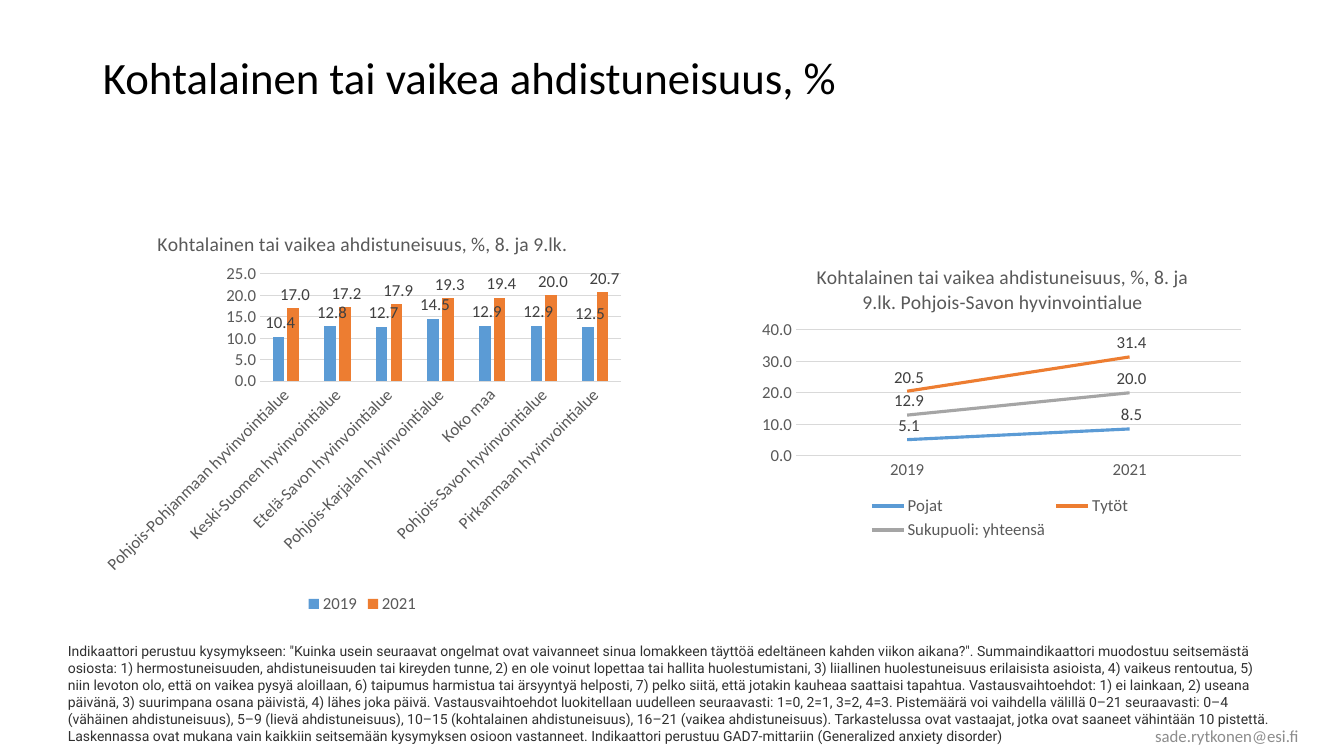
"""Build the slide on anxiety among pupils, with a column and a line chart."""
import pptx
import pptx.chart.data
import pptx.dml.color
import pptx.enum.chart
import pptx.enum.text
import pptx.oxml
import pptx.oxml.ns
import pptx.util

PX = 9071
FORM = r"#\ ##0.0"
GREY = "595959"
RULE = "D9D9D9"
kinds = pptx.enum.chart.XL_CHART_TYPE
spots = pptx.enum.chart.XL_LABEL_POSITION
none = pptx.enum.chart.XL_TICK_MARK.NONE
low = pptx.enum.chart.XL_LEGEND_POSITION.BOTTOM
aligns = pptx.enum.text.PP_ALIGN
anchors = pptx.enum.text.MSO_ANCHOR
qn = pptx.oxml.ns.qn
paint = pptx.dml.color.RGBColor.from_string


def style(font, size, color, face="Calibri"):
    font.size = pptx.util.Pt(size)
    font.name = face
    font.bold = False
    font.color.rgb = paint(color)


def place(node, inner, spot):
    old = node.find(qn("c:layout"))
    at = 0 if old is None else node.index(old)
    if old is not None:
        node.remove(old)
    tags = '<c:layoutTarget val="inner"/>' if inner else ""
    tags += '<c:xMode val="edge"/><c:yMode val="edge"/>'
    tags += "".join(f'<c:{k} val="{v:.3f}"/>' for k, v in zip("xywh", spot))
    node.insert(at, pptx.oxml.parse_xml(
        f'<c:layout {pptx.oxml.ns.nsdecls("c")}><c:manualLayout>{tags}'
        '</c:manualLayout></c:layout>'))


deck = pptx.Presentation()
deck.slide_width = 1344 * PX
deck.slide_height = 756 * PX
slide = deck.slides.add_slide(deck.slide_layouts[6])

note = " ".join([
    'Indikaattori perustuu kysymykseen: "Kuinka usein seuraavat ongelmat ovat vaivanneet sinua',
    'lomakkeen täyttöä edeltäneen kahden viikon aikana?". Summaindikaattori muodostuu seitsemästä',
    'osiosta: 1) hermostuneisuuden, ahdistuneisuuden tai kireyden tunne, 2) en ole voinut lopettaa',
    'tai hallita huolestumistani, 3) liiallinen huolestuneisuus erilaisista asioista, 4) vaikeus',
    'rentoutua, 5) niin levoton olo, että on vaikea pysyä aloillaan, 6) taipumus harmistua tai',
    'ärsyyntyä helposti, 7) pelko siitä, että jotakin kauheaa saattaisi tapahtua.',
    'Vastausvaihtoehdot: 1) ei lainkaan, 2) useana päivänä, 3) suurimpana osana päivistä, 4) lähes',
    'joka päivä. Vastausvaihtoehdot luokitellaan uudelleen seuraavasti: 1=0, 2=1, 3=2, 4=3.',
    'Pistemäärä voi vaihdella välillä 0–21 seuraavasti: 0–4 (vähäinen ahdistuneisuus), 5–9 (lievä',
    'ahdistuneisuus), 10–15 (kohtalainen ahdistuneisuus), 16–21 (vaikea ahdistuneisuus).',
    'Tarkastelussa ovat vastaajat, jotka ovat saaneet vähintään 10 pistettä. Laskennassa ovat',
    'mukana vain kaikkiin seitsemään kysymyksen osioon vastanneet. Indikaattori perustuu',
    'GAD7-mittariin (Generalized anxiety disorder)'])

texts = [
    ("Kohtalainen tai vaikea ahdistuneisuus, %", (93, 40, 1159, 146), 32, "000000",
     "Calibri", aligns.LEFT, anchors.TOP, 10),
    ("sade.rytkonen@esi.fi", (1000, 716, 454, 40), 12, "8C8C8C",
     "Calibri", aligns.CENTER, anchors.MIDDLE, 5),
    (note, (58, 638, 1228, 112), 10, "303030",
     "Roboto", aligns.LEFT, anchors.TOP, 5),
]
for words, spot, size, color, face, align, anchor, top in texts:
    box = slide.shapes.add_textbox(*(n * PX for n in spot))
    frame = box.text_frame
    frame.word_wrap = True
    frame.vertical_anchor = anchor
    frame.margin_top = top * PX
    para = frame.paragraphs[0]
    para.alignment = align
    run = para.add_run()
    run.text = words
    style(run.font, size, color, face)

areas = [f"{name} hyvinvointialue" for name in (
    "Pohjois-Pohjanmaan", "Keski-Suomen", "Etelä-Savon", "Pohjois-Karjalan",
    "Pohjois-Savon", "Pirkanmaan")]
areas.insert(4, "Koko maa")
head = "Kohtalainen tai vaikea ahdistuneisuus, %, 8. ja 9.lk."
charts = [
    (kinds.COLUMN_CLUSTERED, (93, 206, 539, 412), head, (154, 226),
     (260, 274, 361, 107), areas, 25, 5, spots.OUTSIDE_END,
     [("2019", [10.4, 12.8, 12.7, 14.5, 12.9, 12.9, 12.5], "5B9BD5"),
      ("2021", [17.0, 17.2, 17.9, 19.3, 19.4, 20.0, 20.7], "ED7D31")]),
    (kinds.LINE, (748, 242, 504, 302), head + " Pohjois-Savon hyvinvointialue", (813, 260),
     (796, 330, 445, 126), ["2019", "2021"], 40, 10, spots.ABOVE,
     [("Pojat", [5.1, 8.5], "5B9BD5"),
      ("Tytöt", [20.5, 31.4], "ED7D31"),
      ("Sukupuoli: yhteensä", [12.9, 20.0], "A5A5A5")]),
]
for kind, spot, title, lead, inner, cats, top, step, pos, rows in charts:
    data = pptx.chart.data.CategoryChartData(number_format=FORM)
    data.categories = cats
    for name, vals, color in rows:
        data.add_series(name, vals)
    chart = slide.shapes.add_chart(kind, *(n * PX for n in spot), data).chart
    style(chart.font, 12, "000000")
    x, y, w, h = spot

    chart.has_title = True
    run = chart.chart_title.text_frame.paragraphs[0].add_run()
    run.text = title
    style(run.font, 14, GREY)
    chart.chart_title.include_in_layout = False
    place(chart.chart_title._element, False, ((lead[0] - x) / w, (lead[1] - y) / h))
    place(chart._chartSpace.chart.plotArea, True,
          ((inner[0] - x) / w, (inner[1] - y) / h, inner[2] / w, inner[3] / h))

    chart.has_legend = True
    chart.legend.position = low
    chart.legend.include_in_layout = False
    style(chart.legend.font, 12, GREY)

    for axis in (chart.category_axis, chart.value_axis):
        axis.major_tick_mark = axis.minor_tick_mark = none
        style(axis.tick_labels.font, 12, GREY)
    scale = chart.value_axis
    scale.minimum_scale = 0
    scale.maximum_scale = top
    scale.major_unit = step
    scale.format.line.fill.background()
    scale.tick_labels.number_format = FORM
    scale.tick_labels.number_format_is_linked = False
    for rule in (chart.category_axis.format.line, scale.major_gridlines.format.line):
        rule.color.rgb = paint(RULE)
        rule.width = pptx.util.Pt(0.75)

    plot = chart.plots[0]
    plot.vary_by_categories = False
    if kind == kinds.COLUMN_CLUSTERED:
        plot.gap_width = 219
        plot.overlap = -27
        body = chart.category_axis._element.find(qn("c:txPr")).find(qn("a:bodyPr"))
        body.set("rot", "-2700000")
    for line, (name, vals, color) in zip(plot.series, rows):
        if kind == kinds.LINE:
            line.smooth = False
            line.marker.style = pptx.enum.chart.XL_MARKER_STYLE.NONE
            line.format.line.color.rgb = paint(color)
            line.format.line.width = pptx.util.Pt(2.25)
        else:
            line.format.fill.solid()
            line.format.fill.fore_color.rgb = paint(color)
        tags = line.data_labels
        tags.show_value = True
        tags.position = pos
        tags.number_format = FORM
        tags.number_format_is_linked = False
        style(tags.font, 12, "404040")

deck.save("out.pptx")
